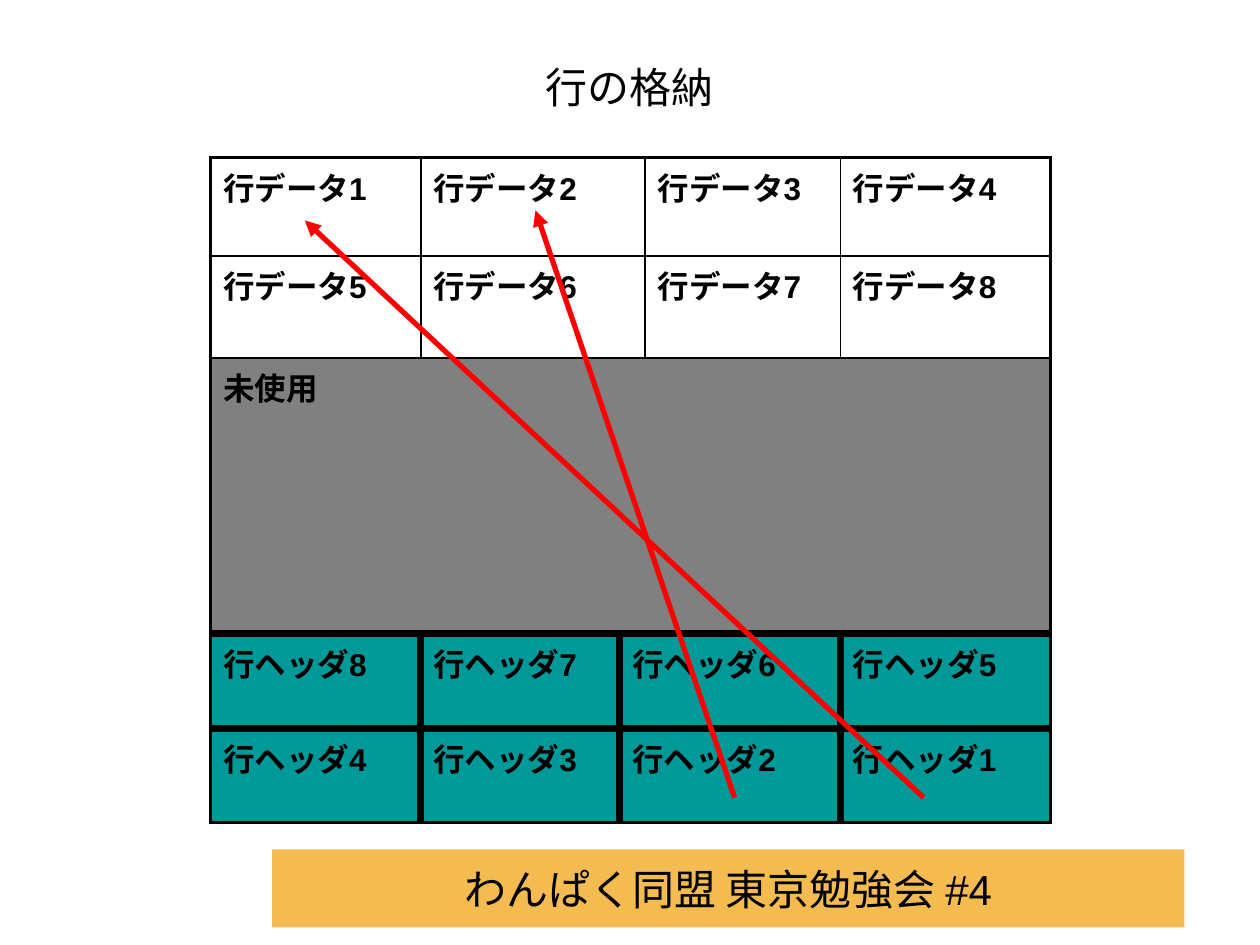
import pptx
import pptx.util
import pptx.dml.color
import pptx.enum.shapes
import pptx.enum.text
import pptx.oxml
import pptx.oxml.ns
from pptx.util import Inches

COLORS = {
    "text": "000000", "border": "000000", "unused": "808080",
    "header": "009999", "arrow": "FF0000", "banner": "F3BB50",
}
HEADING = {"name": "Arial", "size": pptx.util.Pt(24), "bold": False}
CELL = {"name": "Arial", "size": pptx.util.Pt(18), "bold": True}
CENTER = pptx.enum.text.PP_ALIGN.CENTER
LEFT = pptx.enum.text.PP_ALIGN.LEFT
MIDDLE = pptx.enum.text.MSO_ANCHOR.MIDDLE
TOP = pptx.enum.text.MSO_ANCHOR.TOP

COLUMNS = [1.67, 1.58, 0.2, 1.55, 1.67]
ROWS = [0.78, 0.81, 2.19, 0.75, 0.75]
# Column edges of the cells in each kind of row
DATA_EDGES = [0, 1, 3, 4, 5]
UNUSED_EDGES = [0, 4, 5]
HEADER_EDGES = [0, 1, 2, 4, 5]
PAGE = [
    (DATA_EDGES, None, [f"行データ{n}" for n in range(1, 5)]),
    (DATA_EDGES, None, [f"行データ{n}" for n in range(5, 9)]),
    (UNUSED_EDGES, "unused", ["未使用", ""]),
    (HEADER_EDGES, "header", [f"行ヘッダ{n}" for n in range(8, 4, -1)]),
    (HEADER_EDGES, "header", [f"行ヘッダ{n}" for n in range(4, 0, -1)]),
]
FIRST_HEADER_ROW = 3
OUTER, HEAVY, THIN = 2.25, 4.5, 1


def rgb(name):
    return pptx.dml.color.RGBColor.from_string(COLORS[name])


def write(tf, text, font, align=CENTER, anchor=MIDDLE):
    tf.word_wrap = True
    tf.vertical_anchor = anchor
    p = tf.paragraphs[0]
    p.alignment = align
    r = p.add_run()
    r.text = text
    for key, value in font.items():
        setattr(r.font, key, value)
    r.font.color.rgb = rgb("text")


def add_title(s, box, text):
    sp = s.shapes.title
    sp.left, sp.top, sp.width, sp.height = map(Inches, box)
    write(sp.text_frame, text, HEADING)


def add_banner(s, box, text):
    sp = s.shapes.add_shape(pptx.enum.shapes.MSO_SHAPE.RECTANGLE, *map(Inches, box))
    sp.shadow.inherit = False
    sp.fill.solid()
    sp.fill.fore_color.rgb = rgb("banner")
    sp.line.fill.background()
    write(sp.text_frame, text, HEADING)


def horizontal_weight(row):
    """Weight of the rule above a row."""
    if row in (0, len(ROWS)):
        return OUTER
    return HEAVY if row >= FIRST_HEADER_ROW else THIN


def vertical_weight(row, edge):
    if edge in (0, len(COLUMNS)):
        return OUTER
    if row >= FIRST_HEADER_ROW:
        return HEAVY
    return 0 if PAGE[row][1] == "unused" else THIN


def set_borders(cell, weights):
    """Draw the sides given as {side: points}; 0 means no line."""
    tcPr = cell._tc.get_or_add_tcPr()
    for side, weight in weights.items():
        paint = (f'<a:solidFill><a:srgbClr val="{COLORS["border"]}"/></a:solidFill>'
                 if weight else "<a:noFill/>")
        tcPr.append(pptx.oxml.parse_xml(
            f'<a:ln{side} {pptx.oxml.ns.nsdecls("a")} '
            f'w="{int(weight * 12700)}">{paint}</a:ln{side}>'))


def format_cell(cell, fill, weights):
    set_borders(cell, weights)
    if fill:
        cell.fill.solid()
        cell.fill.fore_color.rgb = rgb(fill)
    else:
        cell.fill.background()


def add_page_table(s, left, top):
    box = (left, top, sum(COLUMNS), sum(ROWS))
    table = s.shapes.add_table(len(ROWS), len(COLUMNS), *map(Inches, box)).table
    table.first_row = table.horz_banding = False
    for column, width in zip(table.columns, COLUMNS):
        column.width = Inches(width)
    for row, height in zip(table.rows, ROWS):
        row.height = Inches(height)
    for row, (edges, fill, labels) in enumerate(PAGE):
        for start, end, label in zip(edges, edges[1:], labels):
            weights = {
                "L": vertical_weight(row, start), "R": vertical_weight(row, end),
                "T": horizontal_weight(row), "B": horizontal_weight(row + 1),
            }
            for column in range(start, end):
                format_cell(table.cell(row, column), fill, weights)
            cell = table.cell(row, start)
            if end - start > 1:
                cell.merge(table.cell(row, end - 1))
            if label:
                write(cell.text_frame, label, CELL, LEFT, TOP)


def add_arrow(s, begin, end):
    line = s.shapes.add_connector(
        pptx.enum.shapes.MSO_CONNECTOR.STRAIGHT, *map(Inches, begin + end))
    line.line.color.rgb = rgb("arrow")
    line.line.width = pptx.util.Pt(3)
    ln = line.line._get_or_add_ln()
    ln.append(pptx.oxml.parse_xml(
        f'<a:tailEnd {pptx.oxml.ns.nsdecls("a")} type="triangle"/>'))
    line._element.spPr.append(pptx.oxml.parse_xml(
        f'<a:effectLst {pptx.oxml.ns.nsdecls("a")}/>'))


def main():
    prs = pptx.Presentation()
    prs.slide_width, prs.slide_height = Inches(10), Inches(7.5)
    s = prs.slides.add_slide(prs.slide_layouts[5])
    add_banner(s, (2.16, 6.74, 7.24, 0.62), "わんぱく同盟 東京勉強会 #4")
    add_title(s, (0.5, 0.3, 9, 0.77), "行の格納")
    add_page_table(s, 1.67, 1.25)
    add_arrow(s, (5.83, 6.33), (4.25, 1.67))
    add_arrow(s, (7.33, 6.33), (2.42, 1.75))
    prs.save("out.pptx")


if __name__ == "__main__":
    main()
